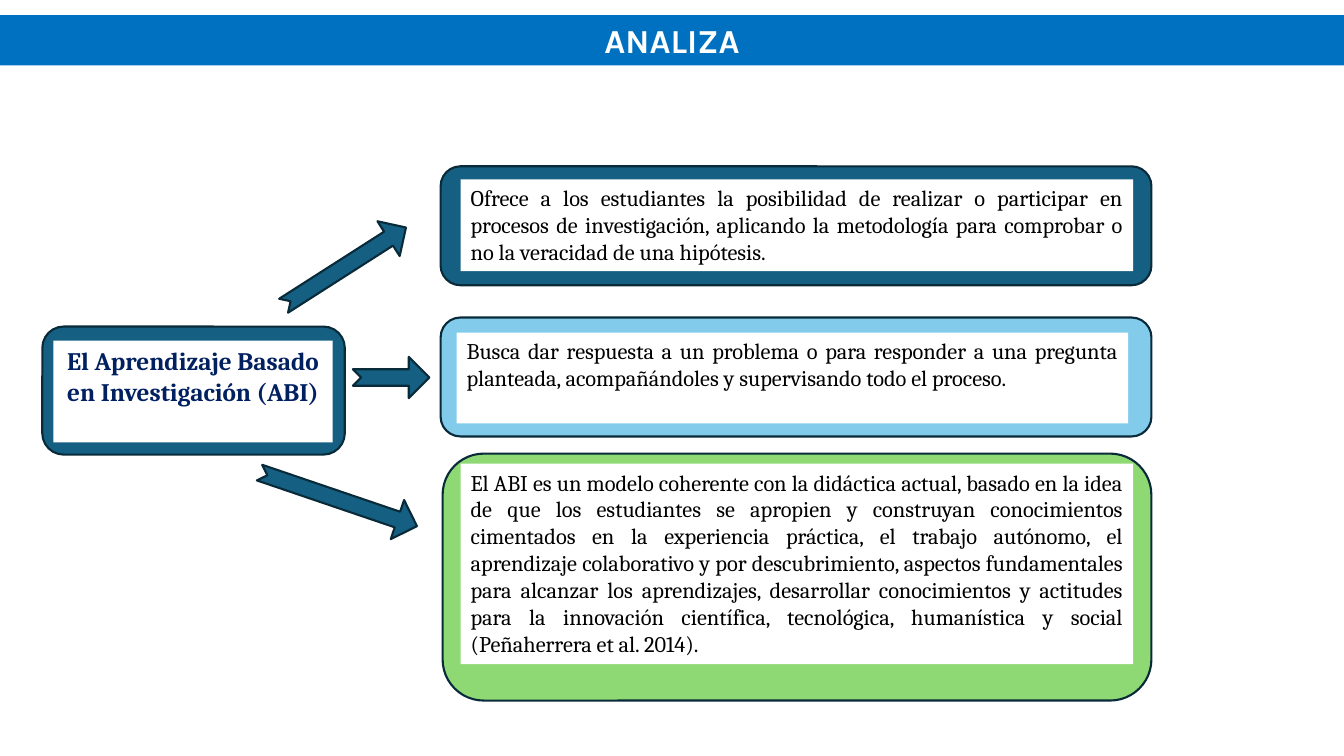
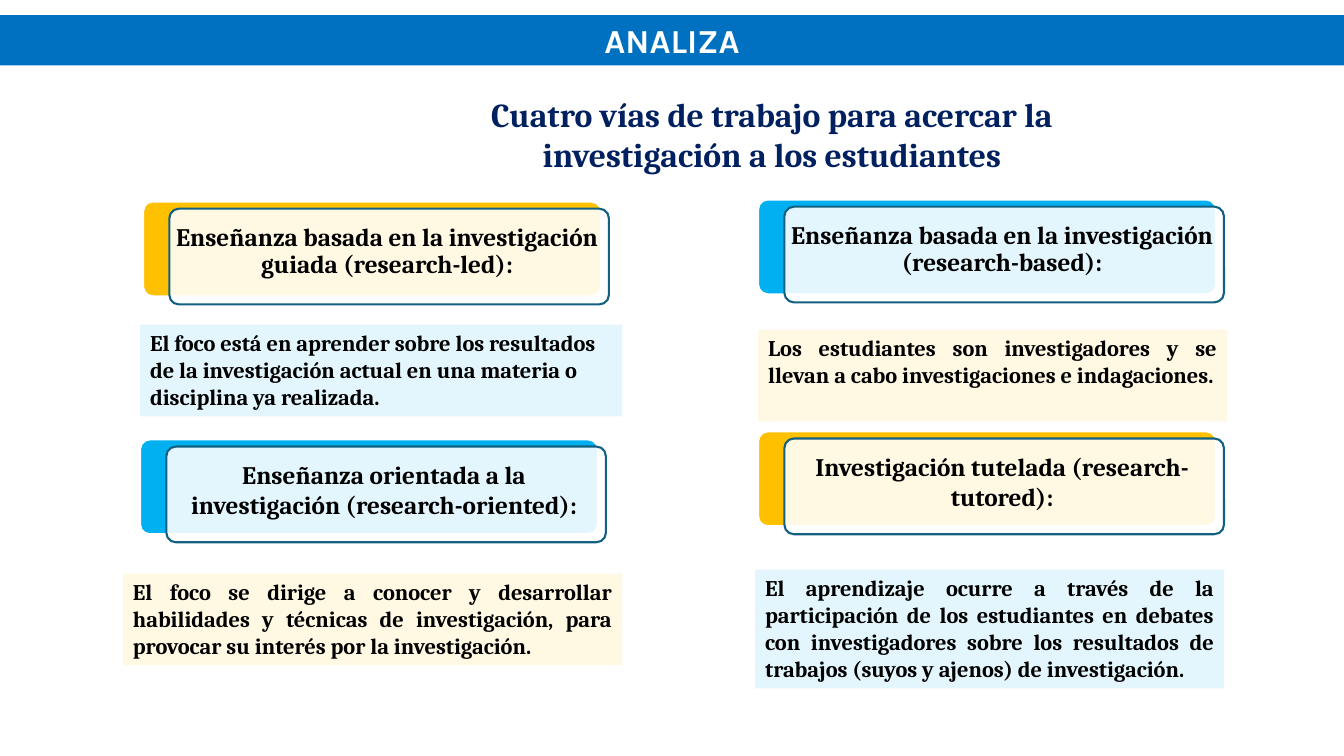
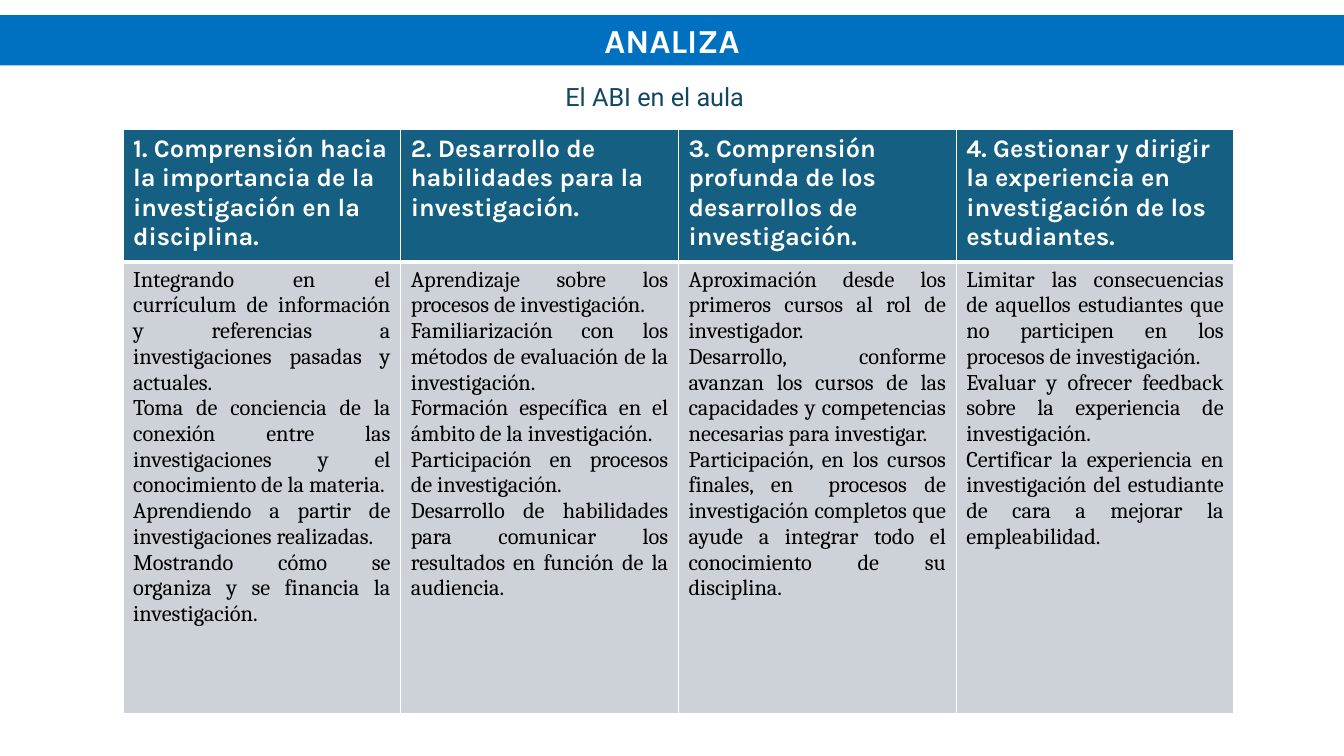
"""Build three slides on research-based learning (ABI)."""
from dataclasses import dataclass

from pptx import Presentation
from pptx.dml.color import RGBColor
from pptx.enum.shapes import MSO_SHAPE
from pptx.enum.text import MSO_ANCHOR, MSO_AUTO_SIZE, PP_ALIGN
from pptx.oxml.ns import qn
from pptx.util import Inches, Pt
from lxml import etree

RECTANGLE, ROUNDED = MSO_SHAPE.RECTANGLE, MSO_SHAPE.ROUNDED_RECTANGLE
ARROW = MSO_SHAPE.NOTCHED_RIGHT_ARROW
LEFT, CENTER, JUSTIFY = PP_ALIGN.LEFT, PP_ALIGN.CENTER, PP_ALIGN.JUSTIFY
TOP, MIDDLE = MSO_ANCHOR.TOP, MSO_ANCHOR.MIDDLE
FIXED = MSO_AUTO_SIZE.NONE
TITLE_ONLY = 5
WIDTH, HEIGHT = 13.33, 7.5


@dataclass(frozen=True)
class Theme:
    """Colours and text styles shared by the slides."""
    white: str = "FFFFFF"
    band: str = "0070C0"
    teal: str = "156082"
    outline: str = "092A39"
    card_line: str = "126082"
    sky: str = "83CBEB"
    green: str = "8ED973"
    amber: str = "FFC000"
    cyan: str = "00B0F0"
    cream: str = "FFF8E3"
    ice: str = "E3F6FD"
    cell: str = "CCD2D8"

    def style(self, name):
        """Return the font values and alignment of a text style."""
        font, size, bold, color, align = {
            "title": ("Karla", 24, True, self.white, CENTER),
            "heading": ("Cambria", 24, True, "002060", CENTER),
            "topic": ("Cambria", 18, True, "002060", CENTER),
            "card": ("Cambria", 18, True, "000000", CENTER),
            "body": ("Cambria", 16, False, "000000", JUSTIFY),
            "note": ("Cambria", 16, True, "000000", JUSTIFY),
            "caption": ("Roboto", 18, False, "104862", CENTER),
            "header": ("Karla", 18, True, self.white, LEFT),
        }[name]
        return {"name": font, "size": Pt(size), "bold": bold}, color, align


THEME = Theme()
TITLE = "ANALIZA"
TITLE_BOX = (0, 0.15, WIDTH, 0.5)

TOPIC = ("El Aprendizaje Basado en Investigación (ABI)", "topic", THEME.teal,
         (0.42, 3.24, 3, 1.27), (0.53, 3.38, 2.77, 1.01))
IDEAS = [
    ("Ofrece a los estudiantes la posibilidad de realizar o participar en procesos de "
     "investigación, aplicando la metodología para comprobar o no la veracidad de una hipótesis.",
     "body", THEME.teal, (4.37, 1.65, 7.05, 1.18), (4.57, 1.78, 6.67, 0.91)),
    ("Busca dar respuesta a un problema o para responder a una pregunta planteada, "
     "acompañándoles y supervisando todo el proceso.",
     "body", THEME.sky, (4.37, 3.15, 7.05, 1.18), (4.53, 3.3, 6.66, 0.9)),
    ("El ABI es un modelo coherente con la didáctica actual, basado en la idea de que los "
     "estudiantes se apropien y construyan conocimientos cimentados en la experiencia práctica, "
     "el trabajo autónomo, el aprendizaje colaborativo y por descubrimiento, aspectos "
     "fundamentales para alcanzar los aprendizajes, desarrollar conocimientos y actitudes para "
     "la innovación científica, tecnológica, humanística y social (Peñaherrera et al. 2014).",
     "body", THEME.green, (4.39, 4.5, 7.03, 2.45), (4.57, 4.6, 6.67, 1.99)),
]
ARROWS = [((2.7, 2.44, 1.44, 0.41), 327.4), ((3.5, 3.54, 0.76, 0.41), 0),
          ((2.53, 4.75, 1.65, 0.41), 18.8)]

WAYS_HEADING = "Cuatro vías de trabajo para acercar la investigación a los estudiantes"
WAYS = [
    ("Enseñanza basada en la investigación guiada (research-led):", (1.42, 2), THEME.amber, 0.9,
     "El foco está en aprender sobre los resultados de la investigación actual en una materia o "
     "disciplina ya realizada.", (1.39, 3.22, 4.78, 0.91), THEME.ice, LEFT),
    ("Enseñanza basada en la investigación (research-based):", (7.52, 1.98), THEME.cyan, 0.9,
     "Los estudiantes son investigadores y se llevan a cabo investigaciones e indagaciones.",
     (7.52, 3.27, 4.65, 0.91), THEME.cream, JUSTIFY),
    ("Enseñanza orientada a la investigación (research-oriented):", (1.39, 4.36), THEME.cyan, 1,
     "El foco se dirige a conocer y desarrollar habilidades y técnicas de investigación, para "
     "provocar su interés por la investigación.",
     (1.22, 5.69, 4.95, 0.91), THEME.cream, JUSTIFY),
    ("Investigación tutelada (research-tutored):", (7.52, 4.28), THEME.amber, 1,
     "El aprendizaje ocurre a través de la participación de los estudiantes en debates con "
     "investigadores sobre los resultados de trabajos (suyos y ajenos) de investigación.",
     (7.49, 5.65, 4.65, 1.18), THEME.ice, JUSTIFY),
]

CLASSROOM_HEADING = "El ABI en el aula"
CLASSROOM = [
    ("1. Comprensión hacia la importancia de la investigación en la disciplina.",
     ["Integrando en el currículum de información y referencias a investigaciones pasadas y "
      "actuales.",
      "Toma de conciencia de la conexión entre las investigaciones y el conocimiento de la "
      "materia.",
      "Aprendiendo a partir de investigaciones realizadas.",
      "Mostrando cómo se organiza y se financia la investigación."]),
    ("2. Desarrollo de habilidades para la investigación.",
     ["Aprendizaje sobre los procesos de investigación.",
      "Familiarización con los métodos de evaluación de la investigación.",
      "Formación específica en el ámbito de la investigación.",
      "Participación en procesos de investigación.",
      "Desarrollo de habilidades para comunicar los resultados en función de la audiencia."]),
    ("3. Comprensión profunda de los desarrollos de investigación.",
     ["Aproximación desde los primeros cursos al rol de investigador.",
      "Desarrollo, conforme avanzan los cursos de las capacidades y competencias necesarias "
      "para investigar.",
      "Participación, en los cursos finales, en  procesos de investigación completos que ayude "
      "a integrar todo el conocimiento de su disciplina."]),
    ("4. Gestionar y dirigir la experiencia en investigación de los estudiantes.",
     ["Limitar las consecuencias de aquellos estudiantes que no participen en los procesos de "
      "investigación.",
      "Evaluar y ofrecer feedback sobre la experiencia de investigación.",
      "Certificar la experiencia en investigación del estudiante de cara a mejorar la "
      "empleabilidad."]),
]
TABLE_BOX = (1.22, 1.28, 11.02, 5.8)
ROW_HEIGHTS = (1.32, 4.48)


def inches(box):
    """Convert a box to slide units."""
    return [Inches(value) for value in box]


def paint(target, color):
    """Give a shape or cell a solid fill."""
    target.fill.solid()
    target.fill.fore_color.rgb = RGBColor.from_string(color)


def write(frame, lines, style, align=None, spacing=None):
    """Write one paragraph per line in a named style."""
    font_values, color, default_align = THEME.style(style)
    frame.word_wrap = True
    for index, line in enumerate(lines):
        para = frame.add_paragraph() if index else frame.paragraphs[0]
        para.alignment = default_align if align is None else align
        if spacing:
            para.line_spacing = spacing
        span = para.add_run()
        span.text = line
        for name, value in font_values.items():
            setattr(span.font, name, value)
        span.font.color.rgb = RGBColor.from_string(color)


def add_box(page, kind, box, fill, line=None):
    """Add a flat preset shape, outlined if a line colour is given."""
    shape = page.shapes.add_shape(kind, *inches(box))
    shape.shadow.inherit = False
    paint(shape, fill)
    if line:
        shape.line.color.rgb = RGBColor.from_string(line)
        shape.line.width = Pt(1.5)
    else:
        shape.line.fill.background()
    return shape


def add_panel(page, text, box, fill, style, align=None):
    """Add a filled rectangle with text from its top edge."""
    frame = add_box(page, RECTANGLE, box, fill).text_frame
    frame.vertical_anchor = TOP
    write(frame, [text], style, align)


def add_label(page, text, box, style):
    """Add a plain text box."""
    write(page.shapes.add_textbox(*inches(box)).text_frame, [text], style)


def add_page(deck):
    """Add a slide with the shared title band."""
    page = deck.slides.add_slide(deck.slide_layouts[TITLE_ONLY])
    title = page.shapes.title
    title.left, title.top, title.width, title.height = inches(TITLE_BOX)
    paint(title, THEME.band)
    title.text_frame.auto_size = FIXED
    title.text_frame.vertical_anchor = MIDDLE
    write(title.text_frame, [TITLE], "title")
    return page


def add_ideas(deck):
    """Build the slide that links the topic to its three ideas."""
    page = add_page(deck)
    for text, style, color, frame_box, sheet_box in [*reversed(IDEAS), TOPIC]:
        add_box(page, ROUNDED, frame_box, color, THEME.outline)
        add_panel(page, text, sheet_box, THEME.white, style)
    for box, angle in ARROWS:
        arrow = add_box(page, ARROW, box, THEME.teal, THEME.outline)
        arrow.adjustments[0] = 0.4
        arrow.rotation = angle


def add_card(page, text, left, top, color, spacing):
    """Add a coloured card with a translucent titled card over it."""
    back = add_box(page, ROUNDED, (left, top, 4.54, 0.94), color, THEME.white)
    front = add_box(page, ROUNDED, (left + 0.26, top + 0.07, 4.36, 0.95),
                    THEME.white, THEME.card_line)
    for shape in (back, front):
        shape.adjustments[0] = 0.1
    tint = front.fill._xPr.find(qn("a:solidFill"))[0]
    etree.SubElement(tint, qn("a:alpha"), val="89000")
    frame = front.text_frame
    margins = {"margin_left": 0, "margin_right": 0.04, "margin_top": 0, "margin_bottom": 0.1}
    for name, value in margins.items():
        setattr(frame, name, Inches(value))
    frame.vertical_anchor = MIDDLE
    write(frame, [text], "card", spacing=spacing)


def add_ways(deck):
    """Build the slide with four ways of working."""
    page = add_page(deck)
    add_label(page, WAYS_HEADING, (4.21, 0.88, 6.89, 0.91), "heading")
    for name, (left, top), color, spacing, note, note_box, tint, align in WAYS:
        add_card(page, name, left, top, color, spacing)
        add_panel(page, note, note_box, tint, "note", align)


def add_borders(cell, bottom):
    """Draw white borders round a cell, with its own bottom width."""
    properties = cell._tc.get_or_add_tcPr()
    for index, (side, width) in enumerate([("L", 1), ("R", 1), ("T", 1), ("B", bottom)]):
        line = etree.Element(qn(f"a:ln{side}"), w=str(Pt(width)))
        fill = etree.SubElement(line, qn("a:solidFill"))
        etree.SubElement(fill, qn("a:srgbClr"), val=THEME.white)
        properties.insert(index, line)


def add_classroom(deck):
    """Build the slide with the classroom table."""
    page = add_page(deck)
    add_label(page, CLASSROOM_HEADING, (4.58, 0.76, 3.83, 0.4), "caption")
    table = page.shapes.add_table(2, len(CLASSROOM), *inches(TABLE_BOX)).table
    table.horz_banding = False
    for row, height in zip(table.rows, ROW_HEIGHTS):
        row.height = Inches(height)
    for column, (header, points) in enumerate(CLASSROOM):
        parts = [([header], "header", THEME.teal, 3), (points, "body", THEME.cell, 1)]
        for row, (lines, style, color, bottom) in enumerate(parts):
            cell = table.cell(row, column)
            paint(cell, color)
            add_borders(cell, bottom)
            write(cell.text_frame, lines, style)


def main():
    """Build and save the deck."""
    deck = Presentation()
    deck.slide_width, deck.slide_height = Inches(WIDTH), Inches(HEIGHT)
    for build in (add_ideas, add_ways, add_classroom):
        build(deck)
    deck.save("out.pptx")


if __name__ == "__main__":
    main()
